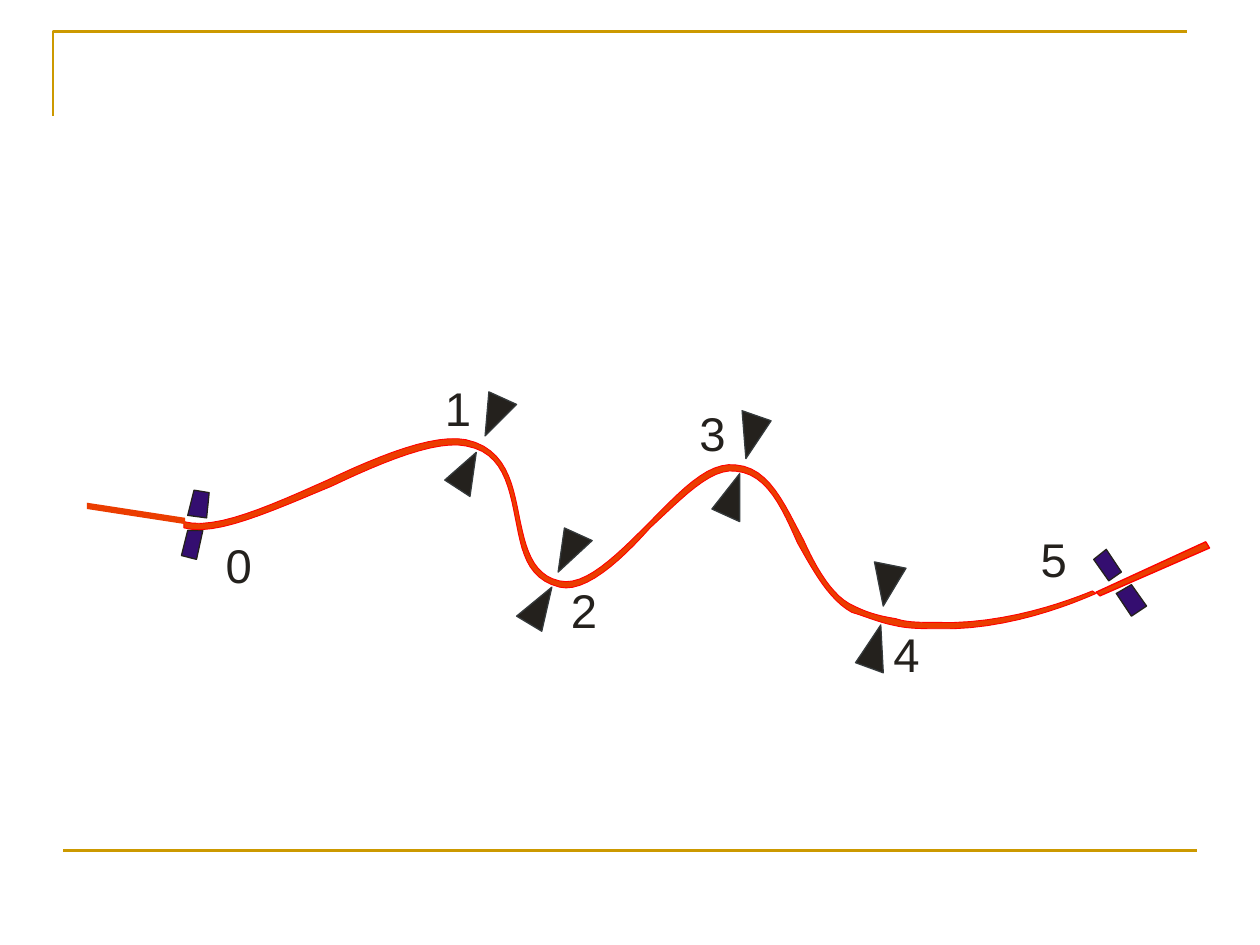
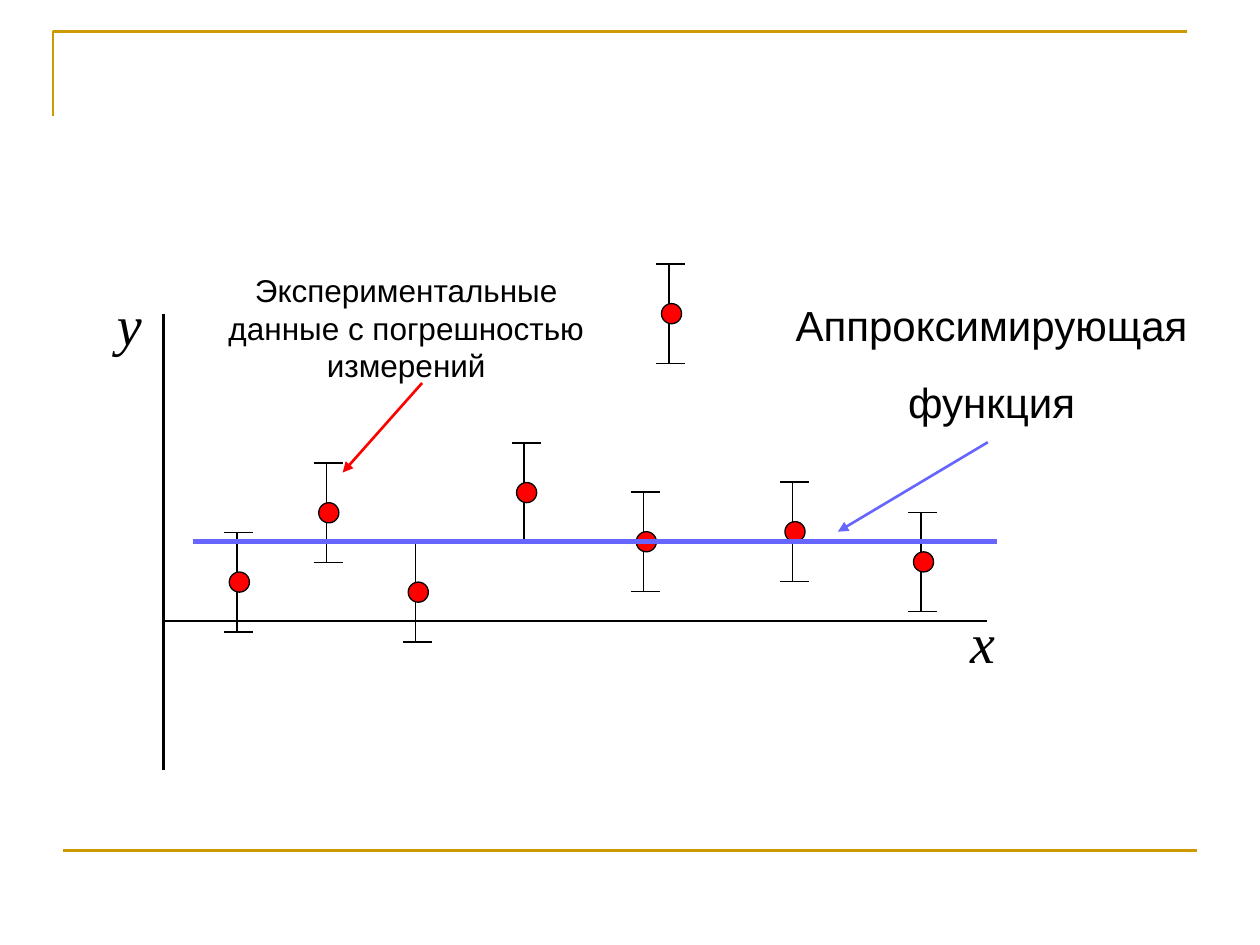
from lxml import etree
from pptx import Presentation
from pptx.dml.color import RGBColor
from pptx.enum.shapes import MSO_CONNECTOR, MSO_SHAPE
from pptx.enum.text import PP_ALIGN
from pptx.oxml.ns import qn
from pptx.util import Inches, Pt

STRAIGHT, OVAL = MSO_CONNECTOR.STRAIGHT, MSO_SHAPE.OVAL
LEFT, CENTER = PP_ALIGN.LEFT, PP_ALIGN.CENTER

GOLD = RGBColor(0xCC, 0x99, 0x00)
BLACK = RGBColor(0, 0, 0)
RED = RGBColor(0xFF, 0, 0)
BLUE = RGBColor(0x66, 0x66, 0xFF)
ORANGE = RGBColor(0xEB, 0x3D, 0x00)
VIOLET = RGBColor(0x34, 0x0E, 0x70)
INK = RGBColor(0x24, 0x21, 0x1D)
SLATE = RGBColor(0x35, 0x3A, 0x3C)

# Slide frame
CORNER = [(0.42, 0.92), (0.42, 0.25), (9.42, 0.25)]
FOOT = (0.5, 6.75), (9.5, 6.75)

# Spline: each edge is a start point and cubic pieces (two controls, end)
UPPER = (1.46, 4.14), [
    ((1.71, 4.21), (2.15, 4.01), (2.6, 3.81)),
    ((3.02, 3.61), (3.45, 3.44), (3.7, 3.49)),
    ((4.02, 3.56), (4.07, 3.84), (4.12, 4.09)),
    ((4.17, 4.34), (4.22, 4.56), (4.44, 4.61)),
    ((4.64, 4.66), (4.89, 4.41), (5.14, 4.16)),
    ((5.39, 3.91), (5.61, 3.66), (5.84, 3.69)),
    ((6.11, 3.71), (6.23, 4.01), (6.38, 4.29)),
    ((6.48, 4.51), (6.61, 4.74), (6.78, 4.81)),
    ((6.88, 4.86), (6.98, 4.89), (7.11, 4.91)),
    ((7.2, 4.94), (7.3, 4.94), (7.43, 4.94)),
    ((7.98, 4.96), (8.5, 4.76), (8.67, 4.69)),
]
LOWER = (8.7, 4.71), [
    ((8.52, 4.79), (7.98, 5.01), (7.43, 4.99)),
    ((7.3, 4.99), (7.2, 4.99), (7.08, 4.96)),
    ((6.98, 4.94), (6.86, 4.89), (6.76, 4.86)),
    ((6.58, 4.76), (6.46, 4.54), (6.33, 4.31)),
    ((6.21, 4.04), (6.09, 3.76), (5.84, 3.74)),
    ((5.64, 3.71), (5.41, 3.96), (5.16, 4.19)),
    ((4.92, 4.46), (4.64, 4.71), (4.44, 4.66)),
    ((4.17, 4.59), (4.14, 4.36), (4.09, 4.11)),
    ((4.04, 3.86), (3.99, 3.59), (3.7, 3.54)),
    ((3.47, 3.49), (3.05, 3.66), (2.63, 3.86)),
    ((2.15, 4.06), (1.71, 4.26), (1.46, 4.19)),
]
STEPS = 12
LEAD = [(1.47, 4.16), (0.69, 4.04), (0.69, 3.99), (1.47, 4.11)]
TAIL = [(8.7, 4.7), (9.57, 4.3), (9.6, 4.35), (8.73, 4.73)]
CLAMPS = [
    [(1.54, 3.89), (1.66, 3.91), (1.64, 4.11), (1.49, 4.09)],
    [(1.49, 4.21), (1.61, 4.21), (1.56, 4.44), (1.44, 4.41)],
    [(9.1, 4.81), (8.98, 4.89), (8.86, 4.71), (8.98, 4.64)],
    [(8.9, 4.54), (8.8, 4.61), (8.68, 4.44), (8.78, 4.36)],
]
WEDGES = [
    [(7.01, 5.34), (6.99, 4.96), (6.79, 5.26)],
    [(6.94, 4.46), (7.01, 4.81), (7.19, 4.51)],
    [(5.87, 4.14), (5.87, 3.76), (5.65, 4.04)],
    [(5.89, 3.26), (5.92, 3.64), (6.12, 3.34)],
    [(4.3, 5.01), (4.38, 4.66), (4.1, 4.89)],
    [(4.48, 4.19), (4.43, 4.54), (4.7, 4.29)],
    [(3.73, 3.94), (3.78, 3.59), (3.53, 3.81)],
    [(3.88, 3.11), (3.85, 3.46), (4.1, 3.21)],
]
KNOTS = [(1.79, 4.26), (3.53, 3.01), (4.53, 4.61),
         (5.55, 3.21), (7.09, 4.96), (8.26, 4.21)]

# Measured points: bar x and middle y
POINTS = [(5.31, 2.49), (1.88, 4.62), (2.59, 4.07), (3.3, 4.7),
          (4.16, 3.91), (5.11, 4.3), (6.29, 4.22), (7.31, 4.46)]
REACH, DOT, SHIFT = 0.395, 0.16, 0.02
CAP = (-0.1, 0.13)
# Start, end, colour, width, arrowhead
AXES = [((1.3, 2.49), (1.3, 6.11), BLACK, 1.5, False),
        ((1.3, 4.93), (7.83, 4.93), BLACK, 1.5, False)]
MARKS = [((1.53, 4.3), (7.91, 4.3), BLUE, 3, False),
         ((7.84, 3.51), (6.65, 4.22), BLUE, 1.5, True),
         ((3.35, 3.04), (2.72, 3.75), RED, 1.5, True)]
# Box, lines, size, font, italic, alignment, space before
LABELS = [
    ((0.83, 2.25, 0.63, 0.63), ["y"], 32, "Times New Roman", True, LEFT, 20),
    ((7.6, 4.77, 0.71, 0.63), ["x"], 32, "Times New Roman", True, LEFT, 20),
    ((6.1, 2.33, 3.54, 1.11), ["Аппроксимирующая", "функция"],
     24, "Arial", False, CENTER, 15),
    ((1.61, 2.1, 3.23, 1), ["Экспериментальные данные с погрешностью измерений"],
     18, "Arial", False, CENTER, 11.2),
]


def paint(shape, fill, edge, width):
    shape.shadow.inherit = False
    if fill is None:
        shape.fill.background()
    else:
        shape.fill.solid()
        shape.fill.fore_color.rgb = fill
    if edge is None:
        shape.line.fill.background()
    else:
        shape.line.color.rgb = edge
        shape.line.width = Pt(width)


def outline(slide, points, fill, edge=None, width=0.75, close=True):
    spots = [(Inches(x), Inches(y)) for x, y in points]
    pen = slide.shapes.build_freeform(*spots[0], scale=1.0)
    pen.add_line_segments(spots[1:], close=close)
    shape = pen.convert_to_shape()
    paint(shape, fill, edge, width)
    return shape


def line(slide, start, end, color, width, arrow=False):
    link = slide.shapes.add_connector(
        STRAIGHT, *[Inches(v) for v in (*start, *end)])
    link.line.color.rgb = color
    link.line.width = Pt(width)
    props = link.element.spPr
    if arrow:
        head = etree.SubElement(props.find(qn("a:ln")), qn("a:tailEnd"))
        head.set("type", "triangle")
    etree.SubElement(props, qn("a:effectLst"))
    return link


def label(slide, box, lines, size, font, italic=False, align=LEFT,
          space=0, color=BLACK, inset=True):
    frame = slide.shapes.add_textbox(*[Inches(v) for v in box]).text_frame
    frame.word_wrap = inset
    if not inset:
        frame.margin_left = frame.margin_right = 0
        frame.margin_top = frame.margin_bottom = 0
    frame.text = "\n".join(lines)
    for para in frame.paragraphs:
        para.alignment = align
        para.space_before = Pt(space)
        for run in para.runs:
            run.font.size = Pt(size)
            run.font.name = font
            run.font.italic = italic
            run.font.color.rgb = color


def trace(start, pieces):
    """Sample a chain of cubic curves."""
    points = [start]
    for a, b, end in pieces:
        for step in range(1, STEPS + 1):
            t = step / STEPS
            u = 1 - t
            points.append(tuple(
                u**3 * p + 3 * u * u * t * q + 3 * u * t * t * r + t**3 * s
                for p, q, r, s in zip(start, a, b, end)))
        start = end
    return points


def frame_layout(slide):
    """Draw the gold frame and move it to the layout."""
    parts = [outline(slide, CORNER, None, GOLD, 1.5, close=False),
             line(slide, *FOOT, GOLD, 1.5)]
    for num, part in enumerate(parts, 20):
        part.element.xpath("./*/p:cNvPr")[0].set("id", str(num))
        slide.slide_layout.shapes.element.append(part.element)


def draw_spline(slide):
    for clamp in CLAMPS:
        outline(slide, clamp, VIOLET, INK)
    outline(slide, trace(*UPPER) + trace(*LOWER), ORANGE, RED, 0.5)
    outline(slide, LEAD, ORANGE)
    outline(slide, TAIL, ORANGE, RED)
    for wedge in WEDGES:
        outline(slide, wedge, INK, SLATE)
    for num, spot in enumerate(KNOTS):
        label(slide, (*spot, 0.21, 0.45), [str(num)], 27, "Arial",
              color=INK, inset=False)


def draw_fit(slide):
    for axis in AXES:
        line(slide, *axis)
    for x, y in POINTS:
        top, base = y - REACH, y + REACH
        line(slide, (x, top), (x, base), BLACK, 0.75)
        for end in (top, base):
            line(slide, (x + CAP[0], end), (x + CAP[1], end), BLACK, 0.75)
        dot = slide.shapes.add_shape(
            OVAL, Inches(x + SHIFT - DOT / 2), Inches(y - DOT / 2),
            Inches(DOT), Inches(DOT))
        paint(dot, RED, BLACK, 0.75)
    for mark in MARKS:
        line(slide, *mark)
    for item in LABELS:
        label(slide, *item)


def main():
    deck = Presentation()
    deck.slide_width, deck.slide_height = Inches(10), Inches(7.5)
    blank = deck.slide_layouts[6]
    first, second = [deck.slides.add_slide(blank) for _ in range(2)]
    frame_layout(first)
    draw_spline(first)
    draw_fit(second)
    deck.save("out.pptx")


if __name__ == "__main__":
    main()
